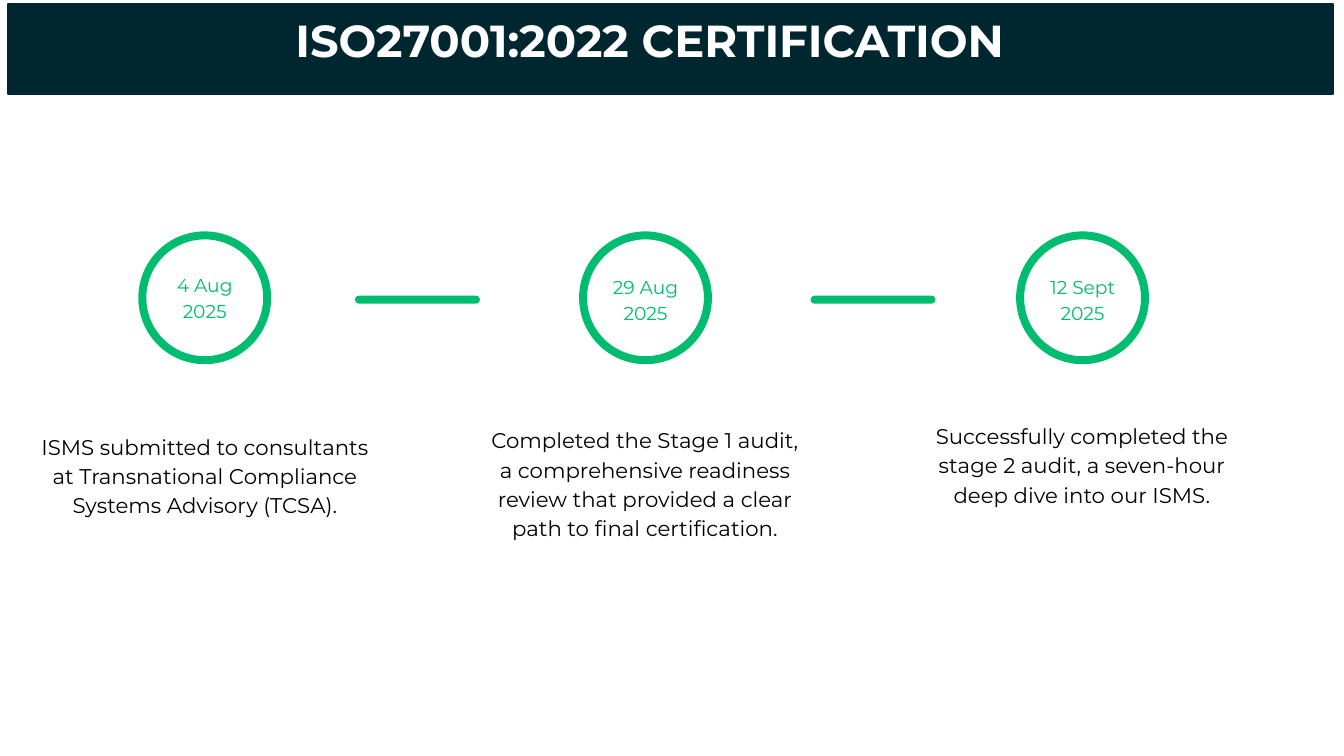
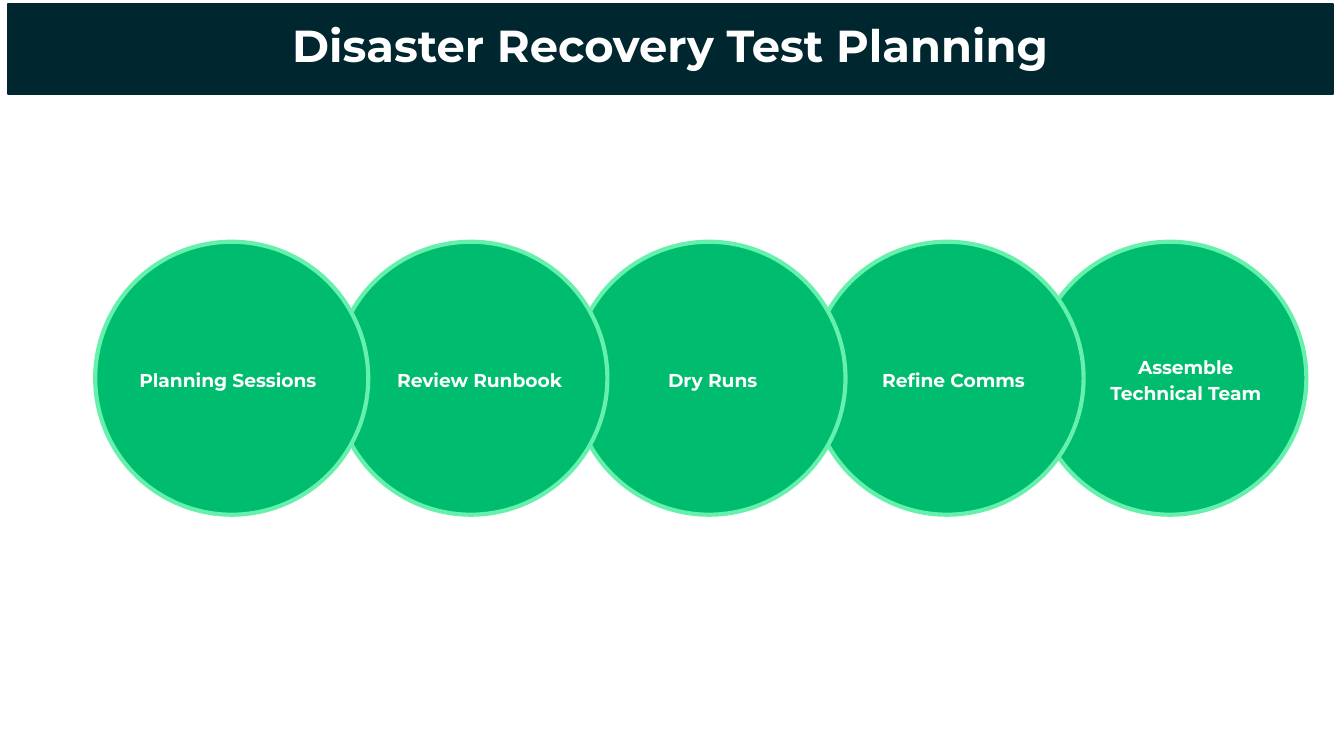
from pptx import Presentation
from pptx.dml.color import RGBColor
from pptx.enum.shapes import MSO_SHAPE as Shape
from pptx.enum.text import MSO_ANCHOR as Anchor, PP_ALIGN as Align
from pptx.util import Cm, Pt

FONT = "Montserrat"
NAVY, GREEN, MINT = "00262F", "00BC6F", "65F0AC"
WHITE, BLACK = "FFFFFF", "000000"


def color(value):
    return RGBColor.from_string(value)


def write(shape, text, size=10, fill=BLACK, bold=False, inset=0.25,
          anchor=Anchor.TOP, spacing=None, after=None):
    frame = shape.text_frame
    frame.word_wrap = True
    frame.vertical_anchor = anchor
    frame.margin_left = frame.margin_right = Cm(inset)
    frame.margin_top = frame.margin_bottom = Cm(inset)
    paragraph = frame.paragraphs[0]
    paragraph.alignment = Align.CENTER
    paragraph.line_spacing = spacing
    paragraph.space_after = after
    run = paragraph.add_run()
    run.text = text
    run.font.name = FONT
    run.font.size = Pt(size)
    run.font.bold = bold
    run.font.color.rgb = color(fill)


class Deck:
    def __init__(self):
        self.presentation = Presentation()
        self.presentation.slide_width = Cm(25.4)
        self.presentation.slide_height = Cm(14.29)
        self.slide = None

    def new_slide(self):
        layout = self.presentation.slide_layouts[6]
        self.slide = self.presentation.slides.add_slide(layout)

    def shape(self, kind, left, top, width, height, fill=None, line=None, weight=0.75):
        shape = self.slide.shapes.add_shape(kind, Cm(left), Cm(top), Cm(width), Cm(height))
        shape.shadow.inherit = False
        if fill:
            shape.fill.solid()
            shape.fill.fore_color.rgb = color(fill)
        else:
            shape.fill.background()
        if line:
            shape.line.color.rgb = color(line)
            shape.line.width = Pt(weight)
        else:
            shape.line.fill.background()
        return shape

    def text(self, text, left, top, width, height, **style):
        box = self.slide.shapes.add_textbox(Cm(left), Cm(top), Cm(width), Cm(height))
        write(box, text, **style)

    def title(self, text, left, top, width):
        self.shape(Shape.FLOWCHART_PROCESS, 0.15, 0.08, 25.04, 1.7, NAVY, NAVY)
        self.text(text, left, top, width, 1.7, size=24, fill=WHITE, bold=True)

    def circle(self, left, top, diameter, **style):
        self.shape(Shape.OVAL, left, top, diameter, diameter, **style)

    def dash(self, left):
        bar = self.shape(Shape.ROUNDED_RECTANGLE, left, 5.59, 2.36, 0.15, GREEN)
        bar.adjustments[0] = 0.5


def build_certification(deck):
    deck.new_slide()
    deck.title("ISO27001:2022 CERTIFICATION ", 3.28, 0, 18.24)
    diameter = 2.36
    body = dict(inset=0.36, spacing=1.15, after=Pt(22.8))
    milestones = [
        (2.69, "4 Aug 2025", 4.75, 2.36, 0.41, 7.77, 6.93,
         "ISMS submitted to consultants at Transnational Compliance "
         "Systems Advisory (TCSA)."),
        (11.02, "29 Aug 2025", 4.8, 2.69, 8.81, 7.65, 6.76,
         "Completed the Stage 1 audit, a comprehensive readiness review "
         "that provided a clear path to final certification."),
        (19.28, "12 Sept 2025", 4.8, 2.36, 17.07, 7.57, 6.76,
         "Successfully completed the stage 2 audit, a seven-hour deep dive "
         "into our ISMS."),
    ]
    for left, date, date_top, date_width, note_left, note_top, note_width, note in milestones:
        deck.circle(left, 4.45, diameter, line=GREEN, weight=4.27)
        date_left = left + (diameter - date_width) / 2
        deck.text(date, date_left, date_top, date_width, 1.73, fill=GREEN, **body)
        deck.text(note, note_left, note_top, note_width, 4.4, size=11.4, **body)
    for left in (6.71, 15.32):
        deck.dash(left)


def build_recovery(deck):
    deck.new_slide()
    deck.title("Disaster Recovery Test Planning", 2.06, 0.08, 21.21)
    steps = [
        (1.8, "Planning Sessions", 2.21, 4.19),
        (6.32, "Review Runbook", 6.65, 4.83),
        (10.82, "Dry Runs", 11.68, 3.58),
        (15.32, "Refine Comms", 16.23, 3.58),
        (19.53, "Assemble Technical Team", 20.62, 3.58),
    ]
    for left, label, label_left, label_width in reversed(steps):
        deck.circle(left, 4.57, 5.16, fill=GREEN, line=MINT, weight=2.25)
        deck.text(label, label_left, 6.43, label_width, 1.45, fill=WHITE,
                  bold=True, anchor=Anchor.MIDDLE, spacing=1.15)


def main():
    deck = Deck()
    build_certification(deck)
    build_recovery(deck)
    deck.presentation.save("out.pptx")


if __name__ == "__main__":
    main()
